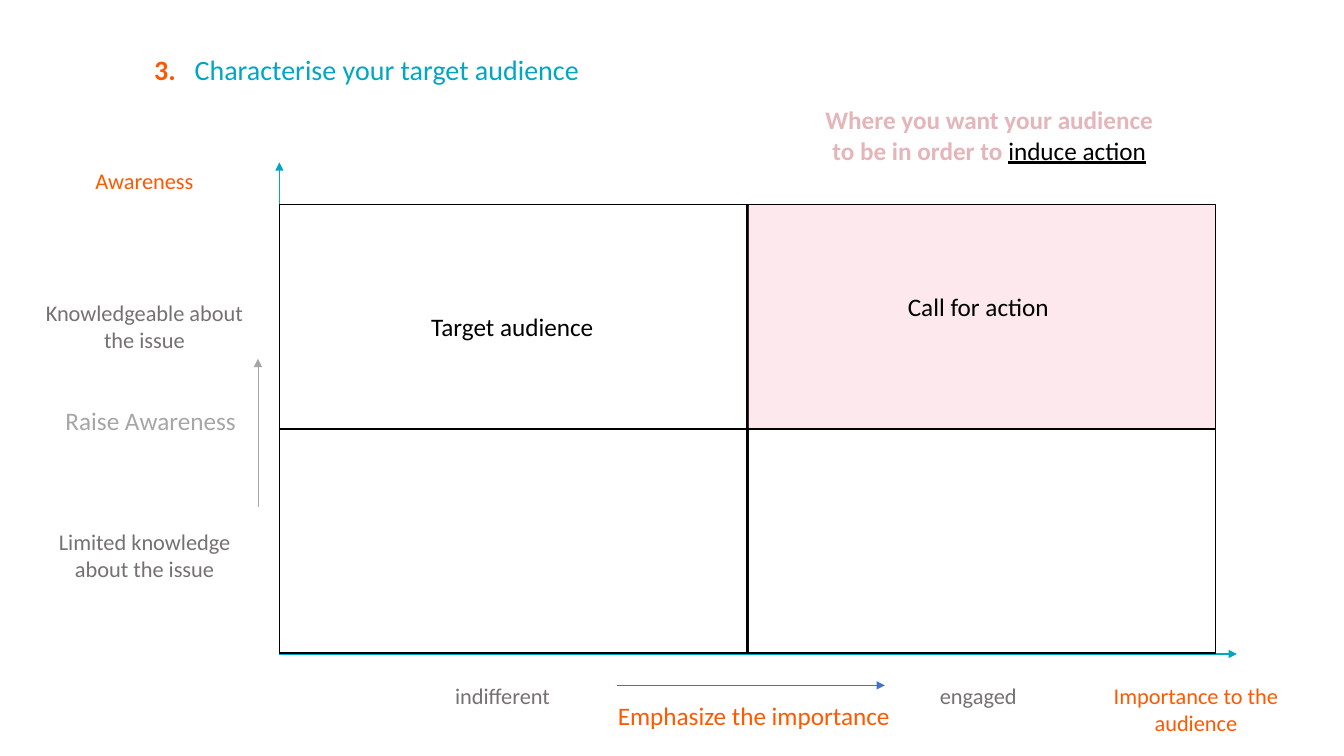
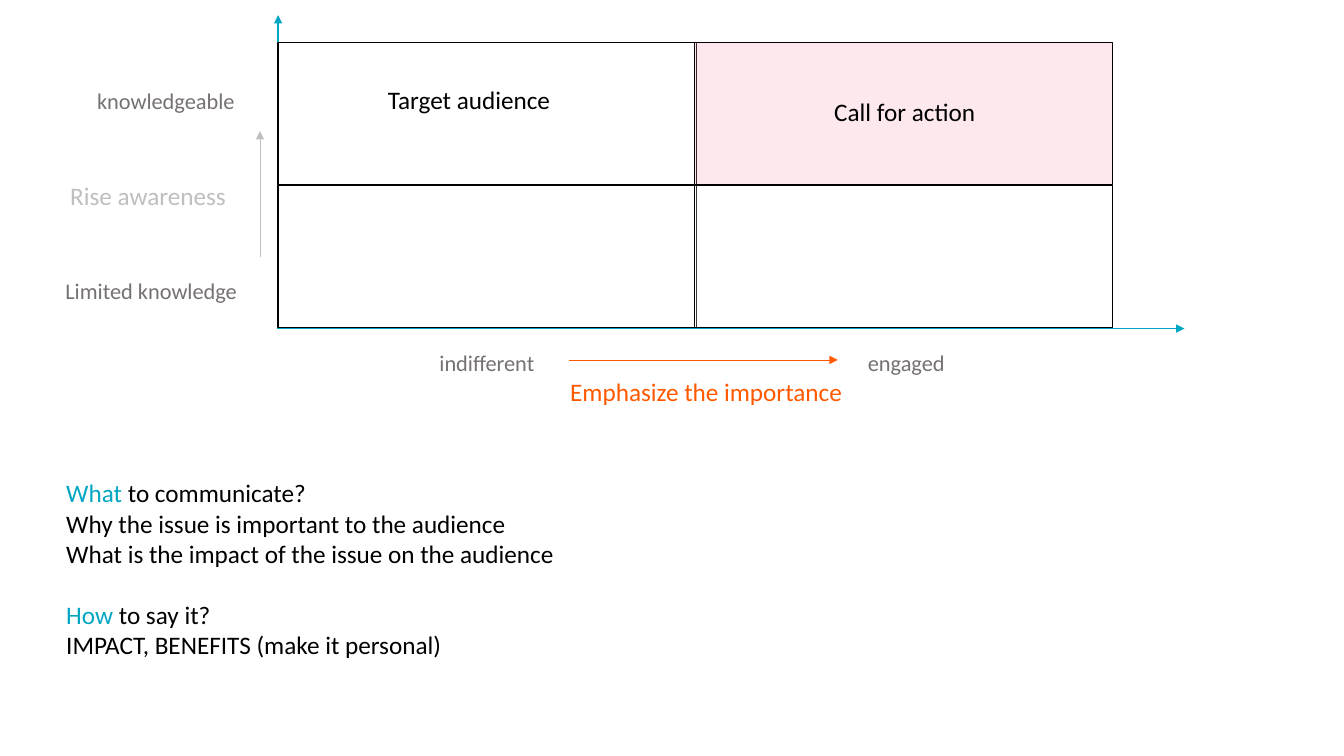
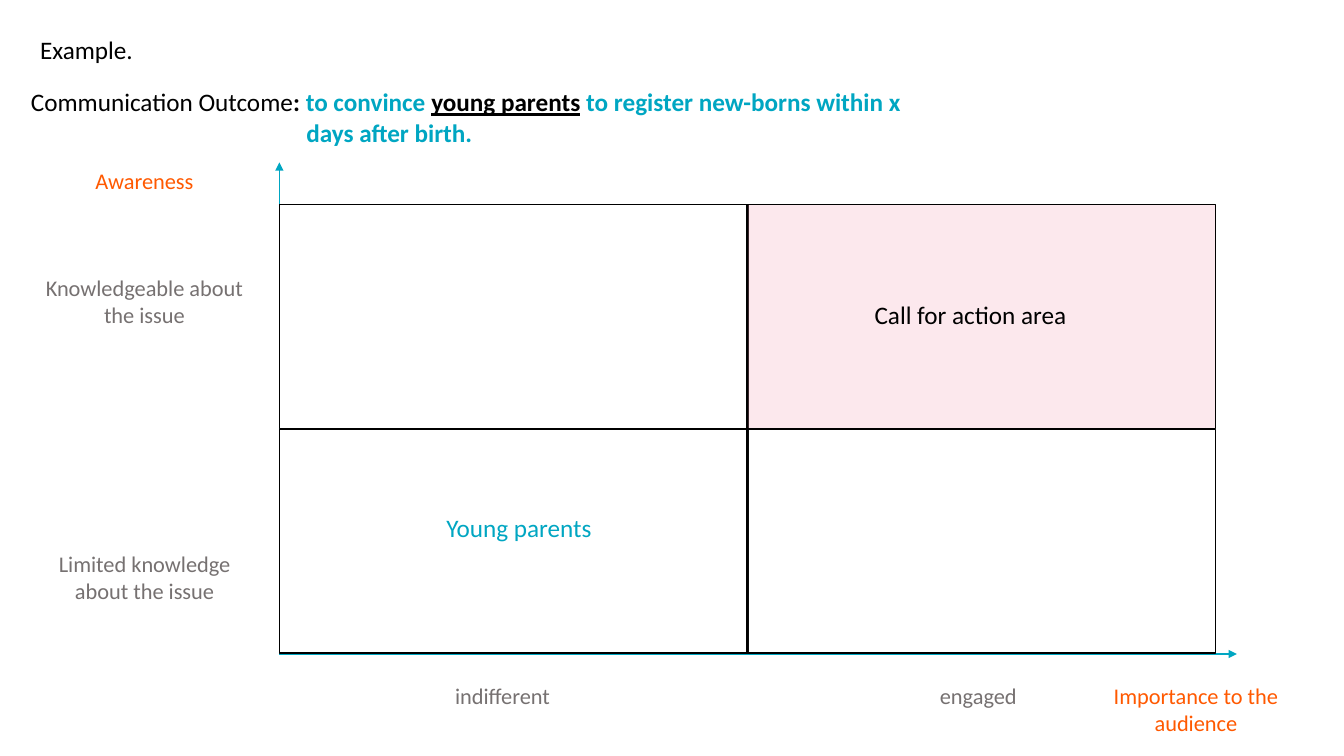
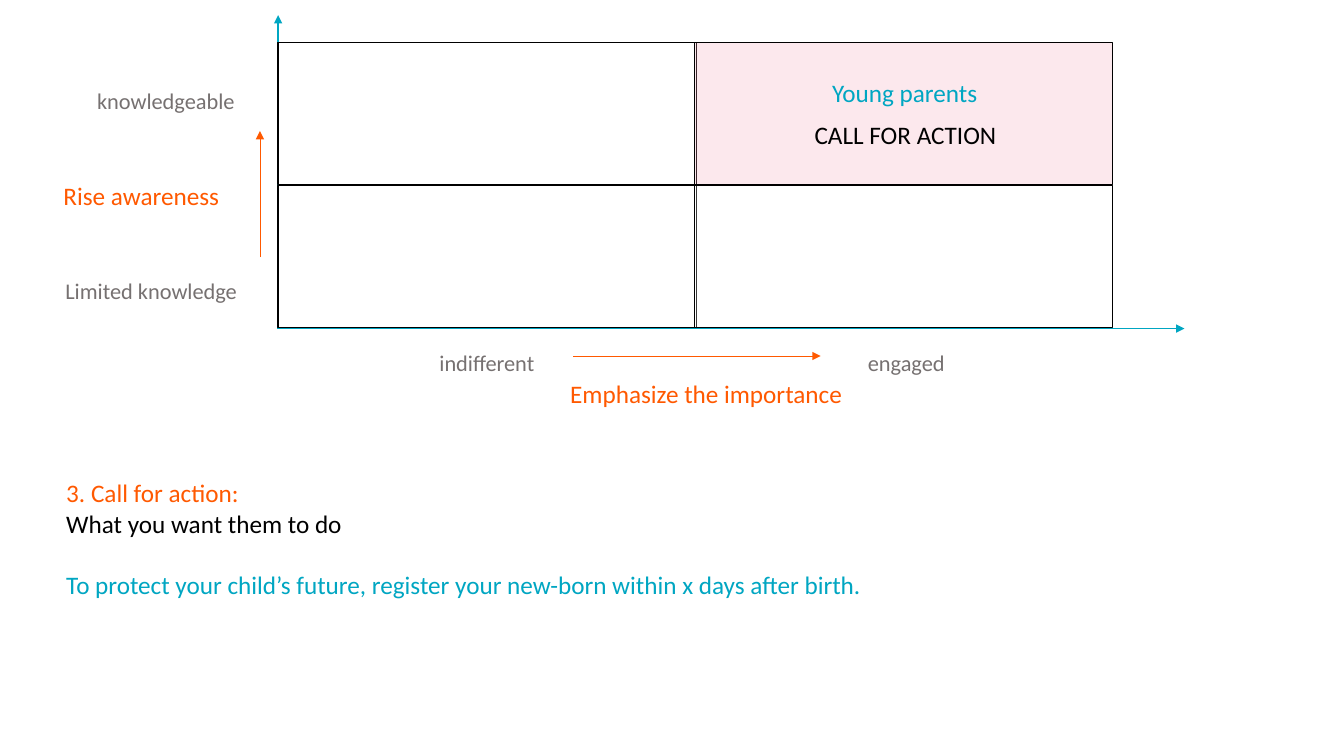
from dataclasses import dataclass

from lxml.etree import SubElement
from pptx import Presentation
from pptx.dml.color import RGBColor
from pptx.enum.shapes import MSO_CONNECTOR as Line, MSO_SHAPE as Preset
from pptx.enum.text import MSO_ANCHOR as Anchor, MSO_AUTO_SIZE as AutoSize, PP_ALIGN as Align
from pptx.oxml.ns import qn
from pptx.util import Cm, Pt

# Shared look
FONT = "Calibri"
TEAL = RGBColor(0x00, 0xA6, 0xC2)
ORANGE = RGBColor(0xFF, 0x59, 0x00)
BLACK = RGBColor(0x00, 0x00, 0x00)
WHITE = RGBColor(0xFF, 0xFF, 0xFF)
PINK = RGBColor(0xF6, 0x9F, 0xB4)
ROSE = RGBColor(0xE4, 0xB5, 0xB9)
BLUE = RGBColor(0x44, 0x72, 0xC4)
LABEL_GREY = RGBColor(0x76, 0x71, 0x71)
MID_GREY = RGBColor(0xA6, 0xA6, 0xA6)
LIGHT_GREY = RGBColor(0xBF, 0xBF, 0xBF)

LABEL_SIZE, TEXT_SIZE, TITLE_SIZE = 16, 18, 20
LINE_GAP = Pt(22)
CENTRED = {"alignment": Align.CENTER}
EMPHASIS = "Emphasize the importance"


@dataclass
class Matrix:
    """Two by two cells on a pair of axes; lengths in centimetres."""
    left: float
    top: float
    cell_width: float
    cell_height: float
    column_step: float
    row_step: float
    axis_y: float
    axis_top: float
    axis_right: float
    cell_fills: dict  # (column, row): (colour, opacity in percent)


LARGE = Matrix(7.04, 5.16, 11.81, 5.64, 11.79, 5.66, 16.48, 4.09, 31.17,
               {(0, 1): None, (0, 0): None, (1, 0): (PINK, 24), (1, 1): (WHITE, 4)})
SMALL = Matrix(7.01, 1.07, 10.54, 3.58, 10.49, 3.61, 8.28, 0.38, 29.85,
               {(0, 1): (WHITE, 22), (0, 0): (WHITE, 22), (1, 0): (PINK, 24), (1, 1): (WHITE, 22)})


# Text
def apply_format(target, values):
    for name, value in values.items():
        setattr(target, name, value)


def add_spans(para, spans, size):
    """Each span is (text, colour) or (text, colour, font values)."""
    for text, colour, *extra in spans:
        span = para.add_run()
        span.text = text
        apply_format(span.font, {"name": FONT, "size": Pt(size), "bold": False})
        for values in extra:
            apply_format(span.font, values)
        span.font.color.rgb = colour


def set_indent(para, margin, first_line=0.0):
    properties = para._p.get_or_add_pPr()
    properties.set("marL", str(Cm(margin)))
    properties.set("indent", str(Cm(first_line)))


def add_text(page, left, top, width, paras, size=TEXT_SIZE, lines=1, values=None):
    height = Cm(0.25) + Pt(1.22 * size) * lines
    box = page.shapes.add_textbox(Cm(left), Cm(top), Cm(width), height)
    frame = box.text_frame
    apply_format(frame, {"word_wrap": True, "auto_size": AutoSize.SHAPE_TO_FIT_TEXT})
    for index, spans in enumerate(paras):
        para = frame.add_paragraph() if index else frame.paragraphs[0]
        apply_format(para, values or {})
        add_spans(para, spans, size)
    return frame


def add_line_text(page, left, top, width, text, colour=BLACK, values=None):
    add_text(page, left, top, width, [[(text, colour)]], values=values)


def add_label(page, left, top, width, text, colour=LABEL_GREY, lines=1):
    add_text(page, left, top, width, [[(text, colour)]], LABEL_SIZE, lines, CENTRED)


def set_title(page, number, text):
    title = page.shapes.title
    apply_format(title, {"left": Cm(3.63), "top": Cm(0.79), "width": Cm(25.4), "height": Cm(2.01)})
    title.text_frame.vertical_anchor = Anchor.MIDDLE
    para = title.text_frame.paragraphs[0]
    apply_format(para, {"alignment": Align.LEFT, "line_spacing": 0.9})
    set_indent(para, 1.02, -1.02)
    add_spans(para, [(number + "\t", ORANGE, {"bold": True}), (text, TEAL)], TITLE_SIZE)


# Lines and cells
def add_arrow(page, start, end, colour, weight=0.5):
    arrow = page.shapes.add_connector(Line.STRAIGHT, *map(Cm, start + end))
    arrow.line.width = Pt(weight)
    arrow.line.color.rgb = colour
    SubElement(arrow.line._get_or_add_ln(), qn("a:tailEnd"), type="triangle")
    SubElement(arrow._element.spPr, qn("a:effectLst"))


def add_cell(page, left, top, width, height, fill):
    cell = page.shapes.add_shape(Preset.RECTANGLE, *map(Cm, (left, top, width, height)))
    cell.shadow.inherit = False
    cell.line.color.rgb = BLACK
    cell.line.width = Pt(1)
    if fill is None:
        cell.fill.background()
        return
    colour, opacity = fill
    cell.fill.solid()
    cell.fill.fore_color.rgb = colour
    tone = cell._element.spPr.find(qn("a:solidFill")).find(qn("a:srgbClr"))
    SubElement(tone, qn("a:alpha"), val=str(opacity * 1000))


def add_matrix(page, matrix):
    corner = (matrix.left, matrix.axis_y)
    for end in ((matrix.left, matrix.axis_top), (matrix.axis_right, matrix.axis_y)):
        add_arrow(page, corner, end, TEAL, 1)
    for (column, row), fill in matrix.cell_fills.items():
        add_cell(page, matrix.left + column * matrix.column_step,
                 matrix.top + row * matrix.row_step,
                 matrix.cell_width, matrix.cell_height, fill)


def add_large_matrix(page, limited_top, knowledgeable_top):
    add_matrix(page, LARGE)
    add_label(page, 21.77, 17.07, 5.77, "engaged")
    add_label(page, 9.78, 17.07, 5.77, "indifferent")
    add_label(page, 0.76, limited_top, 5.77, "Limited knowledge about the issue", lines=2)
    add_label(page, 0.53, knowledgeable_top, 6.22, "Knowledgeable about the issue", lines=2)
    add_label(page, 0.53, 4.09, 6.22, "Awareness", ORANGE)
    add_label(page, 27.03, 17.07, 6.22, "Importance to the audience", ORANGE, lines=2)


def add_small_matrix(page, rise_left, rise_colour):
    add_matrix(page, SMALL)
    add_label(page, 21.01, 8.66, 3.66, "engaged")
    add_label(page, 10.44, 8.66, 3.66, "indifferent")
    add_label(page, 1.04, 6.86, 5.54, "Limited knowledge")
    add_label(page, 1.78, 2.06, 4.8, "knowledgeable")
    add_line_text(page, rise_left, 4.42, 5, "Rise awareness", rise_colour)
    add_arrow(page, (6.55, 6.48), (6.55, 3.3), rise_colour)


def add_message(page, paras, gap_before):
    """Text under the small matrix, with one free line before a paragraph."""
    frame = add_text(page, 1.42, 11.91, 30.99, paras, lines=len(paras) + 1)
    frame.paragraphs[gap_before].space_before = LINE_GAP


# Slides
def build_audience(page):
    add_large_matrix(page, 13.18, 7.42)
    set_title(page, "3.", "Characterise your target audience")
    add_line_text(page, 8.81, 7.72, 8.2, "Target audience", values=CENTRED)
    add_text(page, 20.47, 2.51, 8.92, [[
        ("Where you want your audience to be in order to ", ROSE, {"bold": True}),
        ("induce action", BLACK, {"underline": True})]], lines=2, values=CENTRED)
    add_line_text(page, 1.4, 10.08, 5.11, "Raise Awareness", MID_GREY)
    add_arrow(page, (6.5, 12.78), (6.5, 9.04), MID_GREY)
    add_line_text(page, 15.32, 17.53, 7.65, EMPHASIS, ORANGE)
    add_arrow(page, (15.54, 17.27), (22.3, 17.27), BLUE)
    add_line_text(page, 21.39, 7.21, 6.53, "Call for action", values=CENTRED)


def build_message(page):
    add_small_matrix(page, 1.52, LIGHT_GREY)
    add_message(page, [
        [("What ", TEAL), ("to communicate?", BLACK)],
        [("Why the issue is important to the audience", BLACK)],
        [("What is the impact of the issue on the audience", BLACK)],
        [("How", TEAL), (" to say it?", BLACK)],
        [("IMPACT, BENEFITS (make it personal)", BLACK)]], gap_before=3)
    add_line_text(page, 7.87, 2.01, 7.9, "Target audience", values=CENTRED)
    add_line_text(page, 18.85, 2.29, 7.9, "Call for action", values=CENTRED)
    add_line_text(page, 14.12, 9.35, 7.65, EMPHASIS, ORANGE)
    add_arrow(page, (14.35, 9.07), (21.11, 9.07), ORANGE)


def build_example(page):
    add_large_matrix(page, 13.74, 6.78)
    add_line_text(page, 9.45, 12.78, 7.26, "Young parents", TEAL, CENTRED)
    add_line_text(page, 21.79, 7.42, 6.55, "Call for action area")
    add_line_text(page, 0.76, 0.74, 11.15, "Example.")
    bold = {"bold": True}
    outcome = add_text(page, 0.53, 2.06, 30.1, [
        [("Communication Outcome", BLACK), (": ", BLACK, bold),
         ("to convince ", TEAL, bold),
         ("young parents", BLACK, {"bold": True, "underline": True}),
         (" to register new-borns within x", TEAL, bold)],
        [("days after birth.", TEAL, bold)]], lines=2)
    set_indent(outcome.paragraphs[1], 6.94)


def build_call(page):
    add_small_matrix(page, 1.35, ORANGE)
    add_message(page, [
        [("3. Call for action:", ORANGE)],
        [("What you want them to do", BLACK)],
        [("To protect your child’s future, register your new-born within x days after birth.",
          TEAL)]], gap_before=2)
    add_line_text(page, 18.85, 1.83, 7.9, "Young parents", TEAL, CENTRED)
    add_line_text(page, 18.87, 2.87, 7.9, "CALL FOR ACTION", values=CENTRED)
    add_arrow(page, (14.45, 8.97), (20.68, 8.97), ORANGE)
    add_line_text(page, 14.12, 9.4, 7.65, EMPHASIS, ORANGE)


def main():
    deck = Presentation()
    apply_format(deck, {"slide_width": Cm(33.87), "slide_height": Cm(19.05)})
    title_only, blank = deck.slide_layouts[5], deck.slide_layouts[6]
    for layout, build in ((title_only, build_audience), (blank, build_message),
                          (blank, build_example), (blank, build_call)):
        build(deck.slides.add_slide(layout))
    deck.save("out.pptx")


if __name__ == "__main__":
    main()
